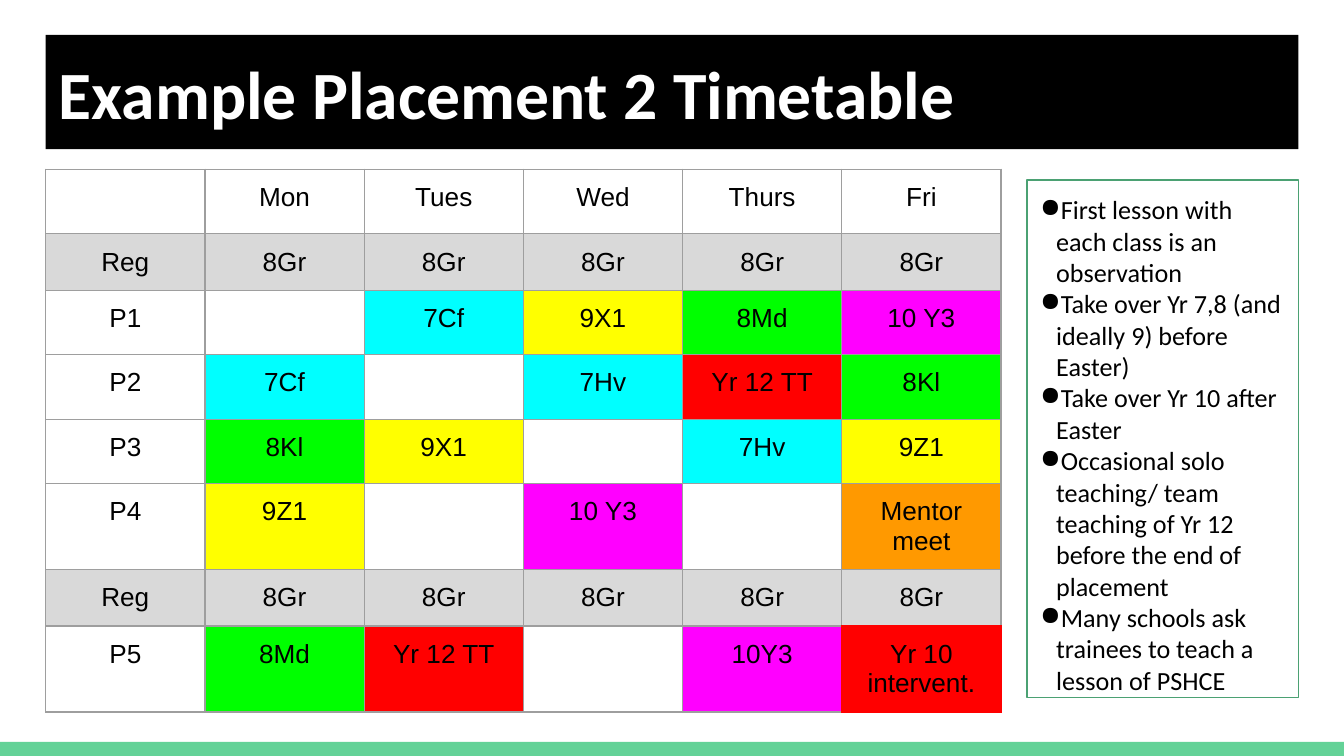
from typing import NamedTuple, Optional

from lxml.etree import SubElement
from pptx import Presentation
from pptx.dml.color import RGBColor
from pptx.enum.shapes import MSO_SHAPE
from pptx.enum.text import MSO_ANCHOR, PP_ALIGN
from pptx.oxml.ns import qn
from pptx.util import Inches, Pt

BLACK = RGBColor(0x00, 0x00, 0x00)
WHITE = RGBColor(0xFF, 0xFF, 0xFF)
MINT = RGBColor(0x63, 0xD2, 0x97)
GREEN_LINE = RGBColor(0x4B, 0xA1, 0x73)
GRID = RGBColor(0x9E, 0x9E, 0x9E)
GREY = RGBColor(0xD9, 0xD9, 0xD9)
CYAN = RGBColor(0x00, 0xFF, 0xFF)
YELLOW = RGBColor(0xFF, 0xFF, 0x00)
LIME = RGBColor(0x00, 0xFF, 0x00)
MAGENTA = RGBColor(0xFF, 0x00, 0xFF)
RED = RGBColor(0xFF, 0x00, 0x00)
ORANGE = RGBColor(0xFF, 0x99, 0x00)

MARGIN = Inches(0.1)
SIDES = ("L", "R", "T", "B")


class Period(NamedTuple):
    height: float
    label: str
    lessons: tuple[str, ...]


TIMETABLE = (
    Period(0.48, "", ("Mon", "Tues", "Wed", "Thurs", "Fri")),
    Period(0.42, "Reg", ("8Gr",) * 5),
    Period(0.48, "P1", ("", "7Cf", "9X1", "8Md", "10 Y3")),
    Period(0.48, "P2", ("7Cf", "", "7Hv", "Yr 12 TT", "8Kl")),
    Period(0.48, "P3", ("8Kl", "9X1", "", "7Hv", "9Z1")),
    Period(0.64, "P4", ("9Z1", "", "10 Y3", "", "Mentor meet")),
    Period(0.42, "Reg", ("8Gr",) * 5),
    Period(0.64, "P5", ("8Md", "Yr 12 TT", "", "10Y3", "Yr 10 intervent.")),
)

# The first matching prefix decides the colour of a lesson
LESSON_COLOURS = {
    "Reg": GREY, "8Gr": GREY, "7": CYAN, "8": LIME, "9": YELLOW,
    "10": MAGENTA, "Yr": RED, "Mentor": ORANGE,
}

NOTES = (
    "First lesson with each class is an observation",
    "Take over Yr 7,8 (and ideally 9) before Easter)",
    "Take over Yr 10 after Easter",
    "Occasional solo teaching/ team teaching of Yr 12 before the end of placement",
    "Many schools ask trainees to teach a lesson of PSHCE",
)


def write(para, text: str, *, font: str, size: float = 14, colour: RGBColor = BLACK,
          bold: bool = False, align: PP_ALIGN = PP_ALIGN.LEFT) -> None:
    para.alignment = align
    span = para.add_run()
    span.text = text
    span.font.name = font
    span.font.size = Pt(size)
    span.font.bold = bold
    span.font.color.rgb = colour


def add_box(page, left: float, top: float, width: float, height: float, *,
            fill: RGBColor, line: Optional[RGBColor] = None,
            anchor: MSO_ANCHOR = MSO_ANCHOR.TOP):
    box = page.shapes.add_shape(MSO_SHAPE.RECTANGLE, Inches(left), Inches(top),
                                Inches(width), Inches(height))
    box.shadow.inherit = False
    box.fill.solid()
    box.fill.fore_color.rgb = fill
    if line is None:
        box.line.fill.background()
    else:
        box.line.color.rgb = line
        box.line.width = Pt(0.75)
    frame = box.text_frame
    frame.word_wrap = True
    frame.vertical_anchor = anchor
    frame.margin_left = frame.margin_right = MARGIN
    frame.margin_top = frame.margin_bottom = MARGIN
    return box


def add_bullet(para) -> None:
    properties = para._p.get_or_add_pPr()
    properties.set("marL", str(Inches(0.12)))
    properties.set("indent", str(Inches(-0.16)))
    colour = SubElement(properties, qn("a:buClr"))
    SubElement(colour, qn("a:srgbClr"), val=str(BLACK))
    SubElement(properties, qn("a:buChar"), char="●")


def set_borders(cell, red_sides: str) -> None:
    properties = cell._tc.get_or_add_tcPr()
    for position, side in enumerate(SIDES):
        line = SubElement(properties, qn(f"a:ln{side}"), w=str(Pt(0.75)))
        properties.remove(line)
        properties.insert(position, line)
        fill = SubElement(line, qn("a:solidFill"))
        SubElement(fill, qn("a:srgbClr"), val=str(RED if side in red_sides else GRID))


def fill_cell(cell, text: str, red_sides: str) -> None:
    cell.margin_left = cell.margin_right = MARGIN
    cell.margin_top = cell.margin_bottom = MARGIN
    para = cell.text_frame.paragraphs[0]
    if text:
        write(para, text, font="Arial", align=PP_ALIGN.CENTER)
    else:
        SubElement(para._p, qn("a:endParaRPr"), sz="1400")
    colour = next((value for prefix, value in LESSON_COLOURS.items()
                   if text.startswith(prefix)), None)
    if colour is None:
        cell.fill.background()
    else:
        cell.fill.solid()
        cell.fill.fore_color.rgb = colour
    set_borders(cell, red_sides)


def add_timetable(page) -> None:
    rows, columns = len(TIMETABLE), 6
    height = sum(period.height for period in TIMETABLE)
    table = page.shapes.add_table(rows, columns, Inches(0.34), Inches(1.26),
                                  Inches(1.185 * columns), Inches(height)).table
    table.first_row = table.horz_banding = False
    for column in table.columns:
        column.width = Inches(1.185)
    # The last lesson is framed in red, also on its neighbours' shared edges
    red_edges = {(rows - 1, columns - 1): "LRTB",
                 (rows - 2, columns - 1): "B",
                 (rows - 1, columns - 2): "R"}
    for row, period in enumerate(TIMETABLE):
        table.rows[row].height = Inches(period.height)
        for column, text in enumerate((period.label, *period.lessons)):
            fill_cell(table.cell(row, column), text, red_edges.get((row, column), ""))


def main() -> None:
    deck = Presentation()
    deck.slide_width = Inches(10)
    deck.slide_height = Inches(5.625)
    page = deck.slides.add_slide(deck.slide_layouts[6])

    # Footer strip and title bar
    add_box(page, 0, 5.52, 10, 0.11, fill=MINT)
    title = add_box(page, 0.34, 0.26, 9.32, 0.85, fill=BLACK, anchor=MSO_ANCHOR.MIDDLE)
    write(title.text_frame.paragraphs[0], "Example Placement 2 Timetable",
          font="Calibri", size=36.2, colour=WHITE, bold=True)

    add_timetable(page)

    # Notes beside the timetable
    notes = add_box(page, 7.64, 1.34, 2.02, 3.85, fill=WHITE, line=GREEN_LINE)
    frame = notes.text_frame
    for index, text in enumerate(NOTES):
        para = frame.add_paragraph() if index else frame.paragraphs[0]
        write(para, text, font="Calibri")
        add_bullet(para)

    deck.save("out.pptx")


if __name__ == "__main__":
    main()
